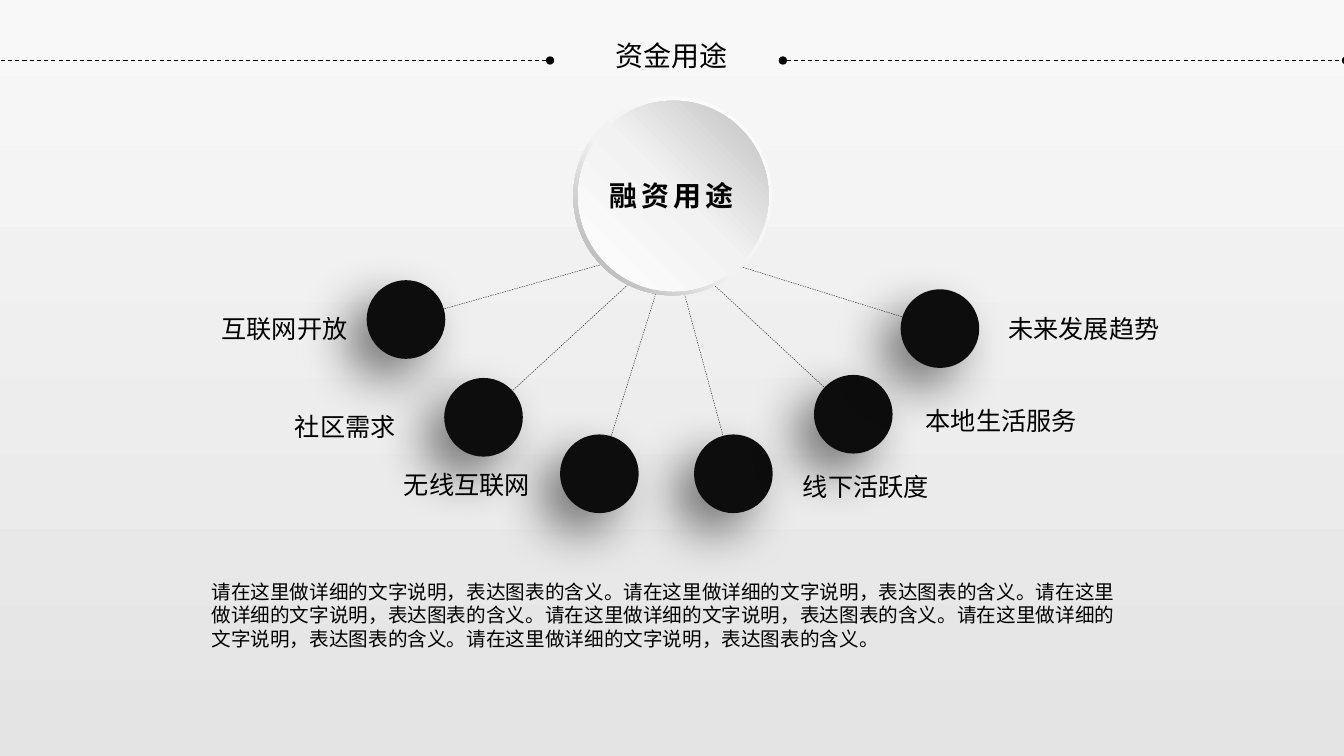
import dataclasses
import lxml.etree
import pptx
import pptx.dml.color
import pptx.enum.dml
import pptx.enum.shapes
import pptx.enum.text
import pptx.oxml.ns
import pptx.util

WIDE = pptx.util.Inches(13.34)
HIGH = pptx.util.Inches(7.5)
FONT = "Noto Sans CJK SC"
INK = {"text": "000000", "dot": "0D0D0D", "white": "FFFFFF", "pale": "F2F2F2",
       "grey": "BFBFBF", "rim": "A6A6A6", "top": "F8F8F8", "base": "E4E4E4"}
DOT = 5.85
LABEL_H = 5.33
HUB = (49.93, 32.4)
RULE_Y = 8
KIND = pptx.enum.shapes.MSO_SHAPE
ALIGN = pptx.enum.text.PP_ALIGN


@dataclasses.dataclass
class Node:
    text: str
    x: float
    y: float
    left: float
    top: float
    width: float


@dataclasses.dataclass
class Disc:
    kind: int
    x: float
    size: float
    stops: list
    angle: int


@dataclasses.dataclass
class Style:
    size: int
    bold: bool = False
    gap: int = 0
    wrap: bool = False
    grow: bool = True
    align: int = ALIGN.LEFT


NODES = [
    Node("互联网开放", 30.21, 42.27, 15.74, 40.8, 10.94),
    Node("社区需求", 35.98, 55.2, 21.21, 53.73, 9.07),
    Node("无线互联网", 44.6, 62.67, 29.31, 61.47, 10.94),
    Node("线下活跃度", 54.57, 62.67, 59, 61.73, 10.94),
    Node("本地生活服务", 63.49, 54.8, 68.14, 52.93, 12.89),
    Node("未来发展趋势", 69.94, 43.47, 74.29, 40.8, 12.89),
]
DISCS = [
    Disc(KIND.DONUT, 50.04, 14.77,
         [(0, "white"), (55, "pale"), (100, "rim")], 135),
    Disc(KIND.OVAL, 50.1, 14.17,
         [(0, "white"), (51, "pale"), (100, "grey")], 315),
]
HUB_Y = 25.93
RULES = [(-0.75, 40.93), (58.25, 100.15)]
NOTE = "\n".join([
    "请在这里做详细的文字说明，表达图表的含义。请在这里做详细的文字说明，表达图表的含义。请在这里",
    "做详细的文字说明，表达图表的含义。请在这里做详细的文字说明，表达图表的含义。请在这里做详细的",
    "文字说明，表达图表的含义。请在这里做详细的文字说明，表达图表的含义。",
])


def across(share: float) -> int:
    return round(WIDE * share / 100)


def down(share: float) -> int:
    return round(HIGH * share / 100)


def tint(name: str) -> pptx.dml.color.RGBColor:
    return pptx.dml.color.RGBColor.from_string(INK[name])


def node(host, tag: str, **attrs):
    return lxml.etree.SubElement(
        host, pptx.oxml.ns.qn(tag), {key: str(val) for key, val in attrs.items()})


def blend(fill, host, stops: list, angle: int) -> None:
    fill.solid()
    fill.fore_color.rgb = tint("white")
    grad = lxml.etree.Element(pptx.oxml.ns.qn("a:gradFill"), rotWithShape="1")
    rows = node(grad, "a:gsLst")
    for spot, name in stops:
        stop = node(rows, "a:gs", pos=spot * 1000)
        node(stop, "a:srgbClr", val=INK[name])
    node(grad, "a:lin", ang=angle * 60000, scaled=0)
    host.replace(host.find(pptx.oxml.ns.qn("a:solidFill")), grad)


def write(shapes, text: str, box: tuple, style: Style) -> None:
    left, top, width, height = box
    item = shapes.add_textbox(across(left), down(top), across(width), down(height))
    frame = item.text_frame
    frame.text = text
    frame.word_wrap = style.wrap
    if style.grow:
        frame.auto_size = pptx.enum.text.MSO_AUTO_SIZE.SHAPE_TO_FIT_TEXT
    else:
        frame.vertical_anchor = pptx.enum.text.MSO_ANCHOR.MIDDLE
    for para in frame.paragraphs:
        para.alignment = style.align
        for run in para.runs:
            run.font.size = pptx.util.Pt(style.size)
            run.font.bold = style.bold
            run.font.color.rgb = tint("text")
            run.font.name = FONT
            props = run.font._element
            node(props, "a:ea", typeface=FONT)
            if style.gap:
                props.set("spc", str(style.gap * 100))


def join(shapes, start: tuple, end: tuple, weight: float, ends: bool = False) -> None:
    link = shapes.add_connector(
        pptx.enum.shapes.MSO_CONNECTOR.STRAIGHT,
        across(start[0]), down(start[1]), across(end[0]), down(end[1]))
    link.line.color.rgb = tint("text")
    link.line.width = pptx.util.Pt(weight)
    link.line.dash_style = pptx.enum.dml.MSO_LINE.DASH
    props = link._element.spPr
    if ends:
        for tag in ("a:headEnd", "a:tailEnd"):
            node(props.find(pptx.oxml.ns.qn("a:ln")), tag, type="oval")
    node(props, "a:effectLst")


def round_shape(shapes, kind: int, x: float, y: float, size: float):
    side = across(size)
    item = shapes.add_shape(
        kind, across(x) - side // 2, down(y) - side // 2, side, side)
    item.shadow.inherit = False
    item.line.fill.background()
    return item


def dot(shapes, spot: Node) -> None:
    item = round_shape(shapes, KIND.OVAL, spot.x, spot.y, DOT)
    item.fill.solid()
    item.fill.fore_color.rgb = tint("dot")
    glow = item._element.spPr.find(pptx.oxml.ns.qn("a:effectLst"))
    shade = node(glow, "a:outerShdw", blurRad=pptx.util.Pt(35),
                 dist=pptx.util.Pt(20), dir=135 * 60000, algn="tr", rotWithShape=0)
    node(node(shade, "a:srgbClr", val=INK["text"]), "a:alpha", val=50000)


def hub(shapes) -> None:
    group = shapes.add_group_shape().shapes
    for disc in DISCS:
        item = round_shape(group, disc.kind, disc.x, HUB_Y, disc.size)
        if disc.kind == KIND.DONUT:
            item.adjustments[0] = 0.05
        blend(item.fill, item._element.spPr, disc.stops, disc.angle)
    write(group, "融资用途", (44.6, 22.93, 11.17, 5.87), Style(20, bold=True, gap=3))


def main() -> None:
    deck = pptx.Presentation()
    deck.slide_width, deck.slide_height = WIDE, HIGH
    slide = deck.slides.add_slide(deck.slide_layouts[6])
    shapes = slide.shapes
    back = slide.background.fill
    blend(back, slide._element.cSld.bg.bgPr, [(0, "top"), (100, "base")], 90)

    write(shapes, "资金用途", (42.88, 3.87, 14.17, 6.8),
          Style(20, wrap=True, grow=False, align=ALIGN.CENTER))
    for start, end in RULES:
        join(shapes, (start, RULE_Y), (end, RULE_Y), 0.75, ends=True)
    for spot in NODES:
        write(shapes, spot.text, (spot.left, spot.top, spot.width, LABEL_H), Style(18))
    for spot in NODES:
        join(shapes, (spot.x, spot.y), HUB, 0.25)
    for spot in NODES:
        dot(shapes, spot)
    hub(shapes)
    write(shapes, NOTE, (15, 76, 82.23, 10.8), Style(14, wrap=True))
    deck.save("out.pptx")


if __name__ == "__main__":
    main()
